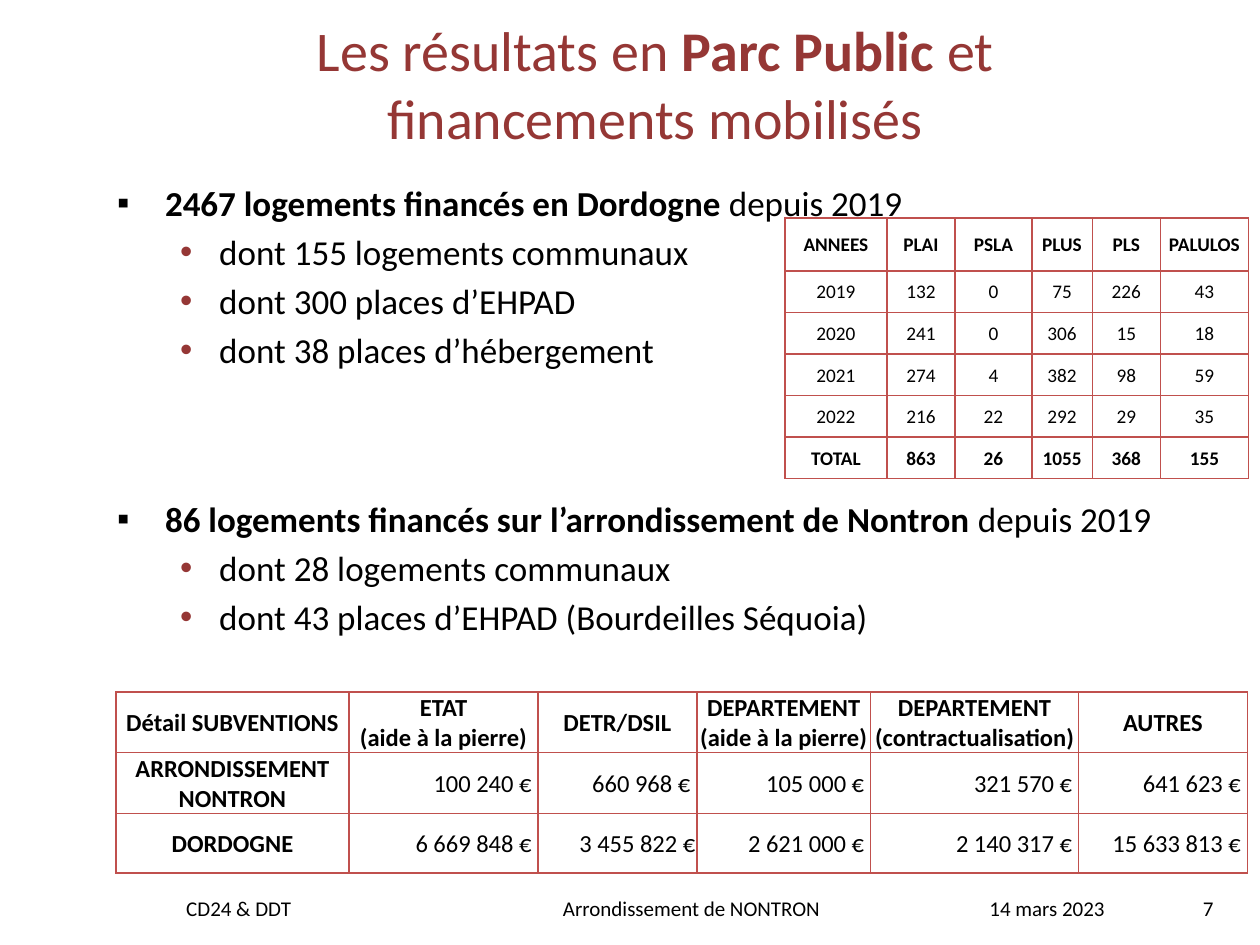
from lxml import etree
from pptx import Presentation
from pptx.dml.color import RGBColor
from pptx.enum.text import MSO_ANCHOR as Anchor, MSO_AUTO_SIZE as AutoSize, PP_ALIGN as Align
from pptx.oxml.ns import qn
from pptx.util import Inches, Pt

BLACK = RGBColor(0x00, 0x00, 0x00)
DARK_RED = RGBColor(0x95, 0x37, 0x35)
BORDER_RED = RGBColor(0xC0, 0x50, 0x4D)
FONT = "Calibri"

TITLE = [("Les résultats en ", False), ("Parc Public ", True), ("et financements mobilisés", False)]

# Each group: bold lead, plain ending, space before, details
GROUPS = [
    ("2467 logements financés en Dordogne ", "depuis 2019", 0,
     ["dont 155 logements communaux", "dont 300 places d’EHPAD", "dont 38 places d’hébergement"]),
    ("86 logements financés sur l’arrondissement de Nontron ", "depuis 2019", 72.7,
     ["dont 28 logements communaux", "dont 43 places d’EHPAD (Bourdeilles Séquoia)"]),
]

HOUSING = [
    ["ANNEES", "PLAI", "PSLA", "PLUS", "PLS", "PALULOS"],
    ["2019", "132", "0", "75", "226", "43"],
    ["2020", "241", "0", "306", "15", "18"],
    ["2021", "274", "4", "382", "98", "59"],
    ["2022", "216", "22", "292", "29", "35"],
    ["TOTAL", "863", "26", "1055", "368", "155"],
]

SUBSIDIES = [
    ["Détail SUBVENTIONS", "ETAT\n(aide à la pierre)", "DETR/DSIL", "DEPARTEMENT (aide à la pierre)",
     "DEPARTEMENT (contractualisation)", "AUTRES"],
    ["ARRONDISSEMENT NONTRON", "100 240 €", "660 968 €", "105 000 €", "321 570 €", "641 623 €"],
    ["DORDOGNE", "6 669 848 €", "3 455 822 €", "2 621 000 €", "2 140 317 €", "15 633 813 €"],
]

FOOTER = [
    ("CD24 & DDT", 1.38, 2.6, Align.LEFT),
    ("Arrondissement de NONTRON", 4.37, 2.84, Align.LEFT),
    ("14 mars 2023", 7.52, 1.58, Align.CENTER),
    ("7", 8.97, 0.76, Align.RIGHT),
]


def style(font, size, color=BLACK, bold=False):
    font.name, font.size, font.bold = FONT, Pt(size), bold
    font.color.rgb = color


def place(shape, left, top, width, height):
    shape.left, shape.top = Inches(left), Inches(top)
    shape.width, shape.height = Inches(width), Inches(height)


def add_spans(para, spans, size, color=BLACK):
    for text, bold in spans:
        span = para.add_run()
        span.text = text
        style(span.font, size, color, bold)


def set_bullet(para, char, color, left, hanging):
    props = para._p.get_or_add_pPr()
    props.set("marL", str(Inches(left)))
    props.set("indent", str(-Inches(hanging)))
    bullet_color = etree.SubElement(props, qn("a:buClr"))
    etree.SubElement(bullet_color, qn("a:srgbClr"), val=str(color))
    etree.SubElement(props, qn("a:buChar"), char=char)


def set_borders(cell, color):
    props = cell._tc.get_or_add_tcPr()
    for position, side in enumerate(("a:lnL", "a:lnR", "a:lnT", "a:lnB")):
        line = etree.Element(qn(side), w=str(Pt(1)))
        fill = etree.SubElement(line, qn("a:solidFill"))
        etree.SubElement(fill, qn("a:srgbClr"), val=str(color))
        props.insert(position, line)


def fill_title(title, box):
    place(title, *box)
    frame = title.text_frame
    frame.auto_size = AutoSize.NONE
    frame.vertical_anchor = Anchor.MIDDLE
    frame.margin_top = Inches(0.17)
    para = frame.paragraphs[0]
    para.alignment = Align.CENTER
    add_spans(para, TITLE, 32, DARK_RED)


def fill_body(body, box):
    place(body, *box)
    frame = body.text_frame
    frame.auto_size = AutoSize.NONE
    frame.vertical_anchor = Anchor.TOP
    for index, (lead, ending, gap, details) in enumerate(GROUPS):
        para = frame.add_paragraph() if index else frame.paragraphs[0]
        set_bullet(para, "▪", BLACK, 0.38, 0.38)
        para.space_before = Pt(gap)
        add_spans(para, [(lead, True), (ending, False)], 20)
        for detail in details:
            para = frame.add_paragraph()
            para.level = 1
            set_bullet(para, "•", DARK_RED, 0.81, 0.31)
            para.space_before = Pt(4)
            add_spans(para, [(detail, False)], 20)


def add_grid(page, box, rows, widths, heights, size, is_bold, is_amount):
    table = page.shapes.add_table(len(rows), len(widths), *map(Inches, box)).table
    table.first_row = table.horz_banding = False
    for column, width in zip(table.columns, widths):
        column.width = Inches(width)
    for row, height in zip(table.rows, heights):
        row.height = Inches(height)
    for r, texts in enumerate(rows):
        for c, text in enumerate(texts):
            cell = table.cell(r, c)
            cell.text = text
            cell.fill.background()
            set_borders(cell, BORDER_RED)
            cell.vertical_anchor = Anchor.MIDDLE
            cell.margin_left = cell.margin_right = cell.margin_top = Inches(0.01)
            cell.margin_bottom = 0
            amount = is_amount(r, c)
            if amount:
                cell.margin_right = Inches(0.05)
            for para in cell.text_frame.paragraphs:
                para.alignment = Align.RIGHT if amount else Align.CENTER
                for span in para.runs:
                    style(span.font, size, bold=is_bold(r, c))
    return table


def add_housing_table(page, box):
    add_grid(page, box, HOUSING, [0.81, 0.54, 0.61, 0.48, 0.54, 0.7], [0.42] + [0.33] * 5, 11,
             is_bold=lambda r, c: r in (0, len(HOUSING) - 1),
             is_amount=lambda r, c: False)


def add_subsidy_table(page, box):
    table = add_grid(page, box, SUBSIDIES, [1.85, 1.5, 1.26, 1.38, 1.65, 1.34], [0.4, 0.42, 0.47], 14,
                     is_bold=lambda r, c: r == 0 or c == 0,
                     is_amount=lambda r, c: r > 0 and c > 0)
    # This amount sits against the border
    table.cell(2, 2).margin_right = Inches(0.01)


def add_footer(page, top, height):
    for text, left, width, alignment in FOOTER:
        box = page.shapes.add_textbox(Inches(left), Inches(top), Inches(width), Inches(height))
        frame = box.text_frame
        frame.word_wrap = True
        para = frame.paragraphs[0]
        para.alignment = alignment
        add_spans(para, [(text, False)], 12)


def main():
    deck = Presentation()
    deck.slide_width, deck.slide_height = Inches(10), Inches(7.5)
    page = deck.slides.add_slide(deck.slide_layouts[1])
    fill_title(page.shapes.title, (1.46, 0.13, 7.48, 0.94))
    fill_body(page.placeholders[1], (0.83, 1.39, 9.17, 4.1))
    add_subsidy_table(page, (0.92, 5.49, 8.98, 1.29))
    add_housing_table(page, (6.23, 1.73, 3.68, 2.07))
    add_footer(page, 7.06, 0.3)
    deck.save("out.pptx")


if __name__ == "__main__":
    main()
